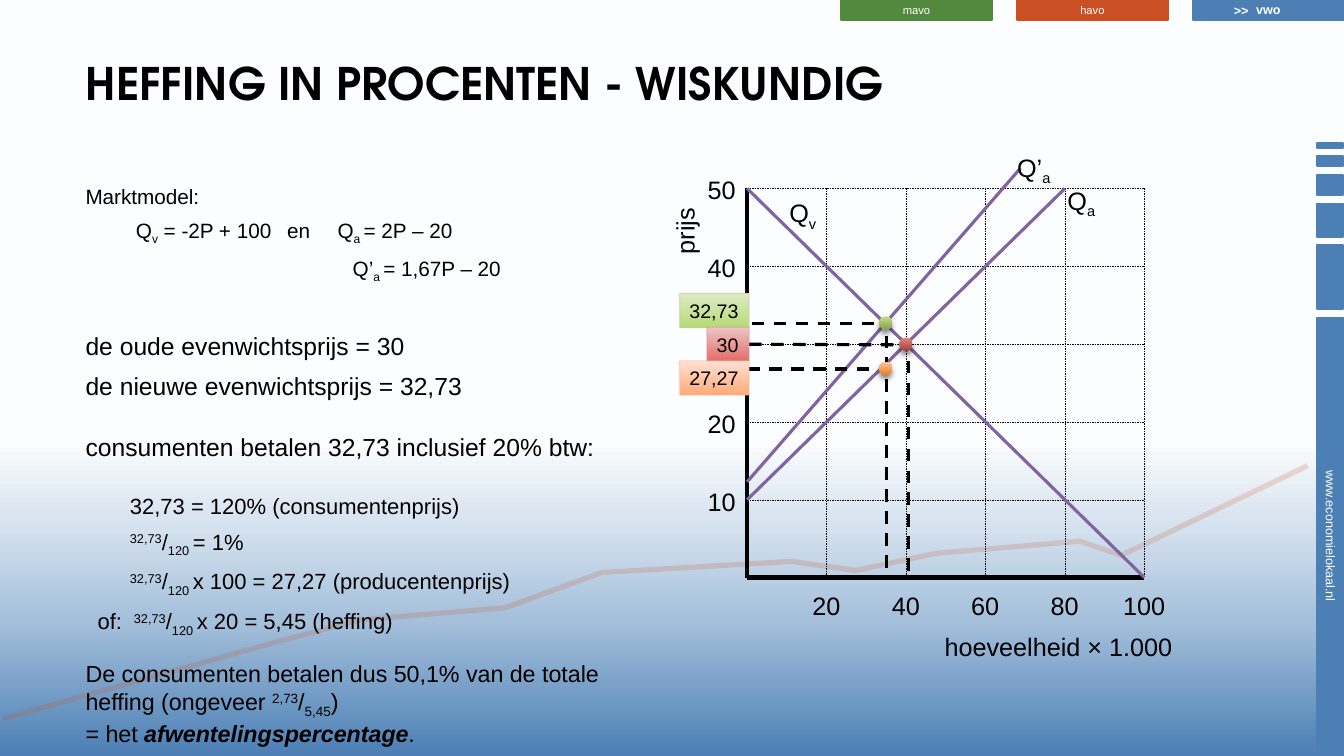
from copy import deepcopy

from pptx import Presentation
from pptx.dml.color import RGBColor
from pptx.enum.dml import MSO_LINE
from pptx.enum.shapes import MSO_CONNECTOR, MSO_SHAPE
from pptx.enum.text import MSO_ANCHOR, MSO_AUTO_SIZE, PP_ALIGN
from pptx.oxml.ns import qn
from pptx.util import Inches, Pt
from lxml import etree

RECTANGLE, OVAL = MSO_SHAPE.RECTANGLE, MSO_SHAPE.OVAL
STRAIGHT, DASH = MSO_CONNECTOR.STRAIGHT, MSO_LINE.DASH
LEFT, CENTER, MIDDLE = PP_ALIGN.LEFT, PP_ALIGN.CENTER, MSO_ANCHOR.MIDDLE
GROW = MSO_AUTO_SIZE.SHAPE_TO_FIT_TEXT
SUB, SUP = "-25000", "30000"

THEME = {
    "font": "Arial", "title font": "TeX Gyre Adventor",
    "ink": "000000", "white": "FFFFFF", "blue": "4C7FB4",
    "green": "52893F", "red": "CA4F22", "curve": "8064A2",
    "sky": [(0, "4C7FB4"), (0.18, "A5C0DB"), (0.3, "D4E1EE"), (0.42, "FCFDFE"), (0.5, "FFFFFF")],
    "title": 32, "chart": 18, "tag": 14, "tab": 8, "strip": 9,
    "model": 14.8, "price": 17.6, "sum": 15.7, "result": 16.6,
}

deck = Presentation()
deck.slide_width, deck.slide_height = Inches(13.33), Inches(7.5)
page = deck.slides.add_slide(deck.slide_layouts[6])
COLUMN, ROW = deck.slide_width / 100, deck.slide_height / 100  # one percent of the slide


def write(para, runs, size, colour=THEME["ink"], bold=False, font=THEME["font"]):
    """Add (text, baseline) runs to a paragraph."""
    for text, baseline in runs:
        span = para.add_run()
        span.text = text
        span.font.size, span.font.name, span.font.bold = Pt(size), font, bold
        span.font.color.rgb = RGBColor.from_string(colour)
        if baseline:
            span._r.get_or_add_rPr().set("baseline", baseline)


def add_box(left, top, width, height, kind=None, fill=None, edge=None, edge_width=1.25):
    """Add a text box, or a filled shape; a pair of colours makes a gradient."""
    place = [int(left * COLUMN), int(top * ROW), int(width * COLUMN), int(height * ROW)]
    if kind is None:
        box = page.shapes.add_textbox(*place)
        box.text_frame.word_wrap = False
        return box
    box = page.shapes.add_shape(kind, *place)
    box.shadow.inherit = False
    if isinstance(fill, tuple):
        box.fill.gradient()
        box.fill.gradient_angle = 270
        for stop, position, colour in zip(box.fill.gradient_stops, (0, 1), fill):
            stop.position, stop.color.rgb = position, RGBColor.from_string(colour)
    else:
        box.fill.solid()
        box.fill.fore_color.rgb = RGBColor.from_string(fill)
    if edge:
        box.line.color.rgb = RGBColor.from_string(edge)
        box.line.width = Pt(edge_width)
    else:
        box.line.fill.background()
    return box


# Background
sky = page.background.fill
sky.gradient()
sky.gradient_angle = 90
stop_list = next(page.element.iter(qn("a:gsLst")))
while len(stop_list) < len(THEME["sky"]):
    stop_list.append(deepcopy(stop_list[0]))
for stop, (position, colour) in zip(sky.gradient_stops, THEME["sky"]):
    stop.position, stop.color.rgb = position, RGBColor.from_string(colour)

# School level tabs and website strip
blue = THEME["blue"]
strip = add_box(82.75, 69.2, 32.48, 3.47, RECTANGLE, blue, blue)
strip.rotation = 90
banners = [(strip, "www.economielokaal.nl", THEME["strip"], False)]
for number, (name, colour) in enumerate([("mavo", "green"), ("havo", "red"), ("vwo", "blue")]):
    tab = add_box(62.57 + 13.09 * number, 0, 11.25, 2.67, RECTANGLE, THEME[colour], THEME[colour])
    active = name == "vwo"
    banners.append((tab, name, THEME["strip" if active else "tab"], active))
for box, text, size, bold in banners:
    frame = box.text_frame
    frame.vertical_anchor = MIDDLE
    frame.margin_top, frame.margin_bottom = 0, Inches(0.01)
    frame.paragraphs[0].alignment = CENTER
    write(frame.paragraphs[0], [(text, None)], size, THEME["white"], bold)
pointer = add_box(91.07, -0.27, 2.63, 3.33)
write(pointer.text_frame.paragraphs[0], [(">>", None)], THEME["strip"], THEME["white"], True)

# Side blocks, growing downwards
top = 18.87
for height in (0.67, 1.33, 2.67, 4.4, 8.4):
    add_box(98.01, top, 1.95, height, RECTANGLE, blue, blue)
    top += height + 1.13

# Trend line behind the text
trend = [(97.3, 61.6), (83.42, 73.47), (80.35, 71.6), (69.62, 73.2), (63.69, 75.47), (58.89, 74.27),
         (44.79, 75.73), (37.58, 80.4), (26.78, 82), (20.26, 85.07), (0.23, 95.07)]
points = [(int(x * COLUMN), int(y * ROW)) for x, y in trend]
builder = page.shapes.build_freeform(*points[0])
builder.add_line_segments(points[1:], close=False)
trend_line = builder.convert_to_shape()
trend_line.shadow.inherit = False
trend_line.fill.background()
trend_line.line.color.rgb = RGBColor.from_string(THEME["red"])
trend_line.line.width = Pt(3.75)
see_through = [(trend_line, "19000")]

# Title
title = add_box(5.63, 6.67, 75.17, 11.87)
write(title.text_frame.paragraphs[0], [("HEFFING IN PROCENTEN - WISKUNDIG", None)],
      THEME["title"], bold=True, font=THEME["title font"])

# Explanation: size, space before, left margin, first-line indent, tabs, runs
fraction = [("32,73", SUP), ("/", None), ("120 ", SUB)]
explanation = [
    ("model", 0, 0, 0, [], [("Marktmodel:", None)]),
    ("model", 3.4, 0, 0, [0.44, 2.12, 2.69],
     [("\tQ", None), ("v", SUB), (" = -2P + 100\ten\tQ", None), ("a ", SUB), ("= 2P – 20", None)]),
    ("model", 3.4, 2.65, 0, [], [("Q’", None), ("a ", SUB), ("= 1,67P – 20", None)]),
    ("price", 30.3, 0, 0, [], [("de oude evenwichtsprijs = 30", None)]),
    ("price", 4, 0, 0, [], [("de nieuwe evenwichtsprijs = 32,73", None)]),
    ("price", 19, 0, 0, [], [("consumenten betalen 32,73 inclusief 20% btw:", None)]),
    ("sum", 18.5, 0.44, 0, [], [("32,73 = 120% (consumentenprijs)", None)]),
    ("sum", 3.6, 0.44, 0, [], fraction + [("= 1%", None)]),
    ("sum", 3.6, 0.44, 0, [], fraction + [("x 100 = 27,27 (producentenprijs)", None)]),
    ("sum", 3.6, 0.48, -0.36, [], [("of:\t", None)] + fraction + [("x 20 = 5,45 (heffing)", None)]),
    ("result", 12, 0, 0, [],
     [("De consumenten betalen dus 50,1% van de totale heffing (ongeveer ", None),
      ("2,73", SUP), ("/", None), ("5,45", SUB), (")", None)]),
]
body = add_box(5.63, 23.6, 40.51, 68.67).text_frame
body.word_wrap = True
for number, (size, before, margin, indent, tabs, runs) in enumerate(explanation):
    para = body.add_paragraph() if number else body.paragraphs[0]
    para.space_before, para.space_after = Pt(before), Pt(3.4)
    settings = para._p.get_or_add_pPr()
    settings.set("marL", str(Inches(margin)))
    settings.set("indent", str(Inches(indent)))
    if tabs:
        tab_list = etree.SubElement(settings, qn("a:tabLst"))
        for tab in tabs:
            etree.SubElement(tab_list, qn("a:tab"), pos=str(Inches(tab)), algn="l")
    write(para, runs, THEME[size])
para.add_line_break()
write(para, [("= het ", None)], THEME["result"])
write(para, [("afwentelingspercentage", None)], THEME["result"], bold=True)
para.runs[-1].font.italic = True
write(para, [(".", None)], THEME["result"])

# Chart lines as (quantity, price) pairs: axes, grid, curves, guides
ORIGIN_X, ORIGIN_Y = 55.59, 76.4
QUANTITY, PRICE = 0.2956, 1.0294
quantities, prices = range(20, 101, 20), range(10, 51, 10)
ink, curve = THEME["ink"], THEME["curve"]
lines = [((0, 50), (0, 0), ink, 3, None), ((100, 0), (0, 0), ink, 3, None)]
lines += [((0, price), (100, price), ink, 0.25, DASH) for price in prices]
lines += [((quantity, 50), (quantity, 0), ink, 0.25, DASH) for quantity in quantities]
lines += [(start, end, curve, 2.25, None) for start, end in
          [((0, 50), (100, 0)), ((0, 10), (80, 50)), ((0, 12.3), (68.8, 52.6))]]
lines += [(start, end, ink, 2.25, DASH) for start, end in
          [((1.2, 32.65), (34, 32.65)), ((40.6, 27.85), (40.6, 0)), ((35, 31.1), (35, 0)),
           ((0, 26.8), (34.5, 26.8)), ((1, 29.9), (40, 29.9))]]
for start, end, colour, width, dash in lines:
    ends = [int(share) for quantity, price in (start, end)
            for share in ((ORIGIN_X + quantity * QUANTITY) * COLUMN, (ORIGIN_Y - price * PRICE) * ROW)]
    connector = page.shapes.add_connector(STRAIGHT, *ends)
    connector.line.color.rgb = RGBColor.from_string(colour)
    connector.line.width = Pt(width)
    if dash:
        connector.line.dash_style = dash
    etree.SubElement(connector._element.spPr, qn("a:effectLst"))
old_price_guide = connector

# Price tags on the vertical axis
tags = [("32,73", 5.18, ("DFEAC7", "B5DB75"), "BECE99"), ("30", 3.15, ("EDC5C4", "E26E6C"), "D19595"),
        ("27,27", 5.18, ("FFE0D3", "FFAB79"), "F9B492")]
for number, (text, width, fill, edge) in enumerate(tags):
    tag = add_box(55.74 - width, 38.8 + 4.47 * number, width, 4.53, RECTANGLE, fill, edge, 0.75)
    tag.text_frame.word_wrap, tag.text_frame.auto_size = False, GROW
    tag.text_frame.paragraphs[0].alignment = LEFT
    write(tag.text_frame.paragraphs[0], [(text, None)], THEME["tag"])
    see_through.append((tag, "60000"))
    if text == "30":
        old_price_guide.begin_connect(tag, 3)
for shape, opacity in see_through:
    edge_colour = next(shape._element.spPr.find(qn("a:ln")).iter(qn("a:srgbClr")))
    etree.SubElement(edge_colour, qn("a:alpha"), val=opacity)

# Equilibrium dots
for quantity, price, fill in [(40, 30, ("E18785", "A7423F")), (34.9, 32.73, ("C9DD90", "86A547")),
                              (34.9, 26.9, ("FFC9A4", "EE7E22"))]:
    dot = add_box(ORIGIN_X + quantity * QUANTITY - 0.49, ORIGIN_Y - price * PRICE - 0.87,
                  0.98, 1.73, OVAL, fill)
    shadow = etree.SubElement(dot._element.spPr.find(qn("a:effectLst")), qn("a:outerShdw"),
                              blurRad=str(Pt(4)), dist=str(Pt(3)), dir="5400000", rotWithShape="0")
    shade = etree.SubElement(shadow, qn("a:srgbClr"), val=ink)
    etree.SubElement(shade, qn("a:alpha"), val="46000")

# Axis and curve labels
labels = [(69.54, 82.8, 18.6, 0, [("hoeveelheid × 1.000", None)]),
          (48.46, 27.87, 4.95, 270, [("prijs", None)]),
          (57.99, 25.47, 3.6, 0, [("Q", None), ("v", SUB)]),
          (78.69, 23.87, 3.68, 0, [("Q", None), ("a", SUB)]),
          (74.94, 19.47, 4.13, 0, [("Q’", None), ("a", SUB)])]
labels += [(51.91, ORIGIN_Y - price * PRICE - 2.5, 3.6, 0, [(str(price), None)])
           for price in prices if price != 30]
for quantity in quantities:
    width = 4.65 if quantity == 100 else 3.6
    labels.append((ORIGIN_X + quantity * QUANTITY - width / 2, 77.47, width, 0, [(str(quantity), None)]))
for left, top, width, turn, runs in labels:
    label = add_box(left, top, width, 5.33)
    label.rotation = turn
    label.text_frame.auto_size = GROW
    write(label.text_frame.paragraphs[0], runs, THEME["chart"])

deck.save("out.pptx")
